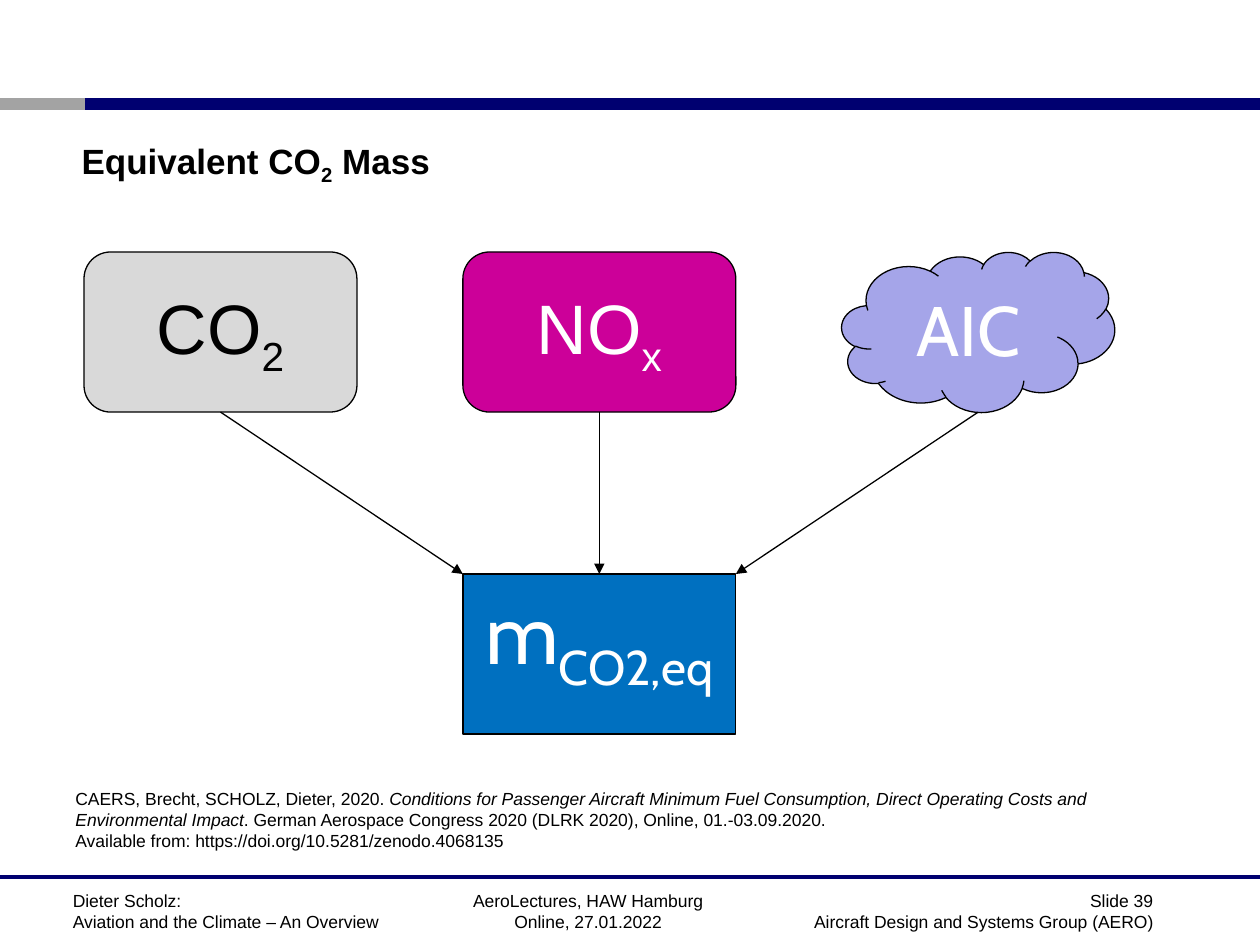
from dataclasses import dataclass

from lxml.etree import SubElement
from pptx import Presentation
from pptx.dml.color import RGBColor
from pptx.enum.shapes import MSO_CONNECTOR as Line, MSO_SHAPE as Shape
from pptx.enum.text import MSO_ANCHOR as Anchor, PP_ALIGN as Align
from pptx.oxml.ns import qn
from pptx.util import Pt

BLACK = RGBColor(0x00, 0x00, 0x00)
WHITE = RGBColor(0xFF, 0xFF, 0xFF)
NAVY = RGBColor(0x00, 0x00, 0x70)
GREY = RGBColor(0xA3, 0xA3, 0xA3)
LIGHT_GREY = RGBColor(0xD9, 0xD9, 0xD9)
MAGENTA = RGBColor(0xCC, 0x00, 0x99)
LAVENDER = RGBColor(0xA5, 0xA5, 0xE9)
BLUE = RGBColor(0x00, 0x70, 0xC0)

# Diagram grid in points
NODE_W, NODE_H = 156, 91.5
COLUMNS = [48 + 216.5 * i for i in range(3)]
SOURCE_TOP, RESULT_TOP = 144, 328


@dataclass(frozen=True)
class Piece:
    text: str
    italic: bool = False
    subscript: bool = False


@dataclass(frozen=True)
class Style:
    size: float
    color: RGBColor = BLACK
    font: str = "Arial"
    bold: bool = False
    align: Align = Align.LEFT


@dataclass(frozen=True)
class Node:
    kind: Shape
    left: float
    top: float
    fill: RGBColor
    label: list[Piece]
    style: Style
    anchor: Anchor = Anchor.MIDDLE


def write(frame, lines: list[list[Piece]], style: Style) -> None:
    frame.word_wrap = True
    for i, pieces in enumerate(lines):
        paragraph = frame.paragraphs[0] if i == 0 else frame.add_paragraph()
        paragraph.alignment = style.align
        for piece in pieces:
            run = paragraph.add_run()
            run.text = piece.text
            font = run.font
            font.name, font.size = style.font, Pt(style.size)
            font.bold, font.italic = style.bold, piece.italic
            font.color.rgb = style.color
            if piece.subscript:
                run._r.get_or_add_rPr().set("baseline", "-25000")


def add_text(slide, left: float, top: float, width: float, height: float,
             lines: list[list[Piece]], style: Style, anchor: Anchor = Anchor.TOP) -> None:
    box = slide.shapes.add_textbox(Pt(left), Pt(top), Pt(width), Pt(height))
    box.text_frame.vertical_anchor = anchor
    write(box.text_frame, lines, style)


def add_line(slide, start: tuple[float, float], end: tuple[float, float],
             color: RGBColor, width: float, arrow: bool = False):
    line = slide.shapes.add_connector(Line.STRAIGHT, *map(Pt, start + end))
    line.line.color.rgb = color
    line.line.width = Pt(width)
    if arrow:
        SubElement(line.line._get_or_add_ln(), qn("a:tailEnd"), type="triangle")
    SubElement(line._element.spPr, qn("a:effectLst"))
    return line


def add_node(slide, node: Node):
    shape = slide.shapes.add_shape(
        node.kind, Pt(node.left), Pt(node.top), Pt(NODE_W), Pt(NODE_H))
    shape.shadow.inherit = False
    shape.fill.solid()
    shape.fill.fore_color.rgb = node.fill
    shape.line.color.rgb = BLACK
    shape.line.width = Pt(0.75)
    shape.text_frame.vertical_anchor = node.anchor
    write(shape.text_frame, [node.label], node.style)
    return shape


def add_frame(slide) -> None:
    # Header and footer rules
    add_line(slide, (0, 59.5), (50, 59.5), GREY, 7.09)
    add_line(slide, (48.5, 59.5), (720, 59.5), NAVY, 7.09)
    add_line(slide, (0, 501), (720, 501), NAVY, 2)

    # Footer texts
    footers = [
        (34.5, 195, Align.LEFT, "Dieter Scholz:", "Aviation and the Climate – An Overview"),
        (222, 228, Align.CENTER, "AeroLectures, HAW Hamburg", "Online, 27.01.2022"),
        (445, 221, Align.RIGHT, "Slide 39", "Aircraft Design and Systems Group (AERO)"),
    ]
    for left, width, align, *lines in footers:
        add_text(slide, left, 505, width, 36, [[Piece(line)] for line in lines],
                 Style(10, align=align))


def add_diagram(slide) -> None:
    dark = Style(40, align=Align.CENTER)
    light = Style(40, WHITE, align=Align.CENTER)
    light_cabin = Style(40, WHITE, "Cabin", align=Align.CENTER)
    result_style = Style(48, WHITE, "Cabin", align=Align.CENTER)
    two = Piece("2", subscript=True)

    # Emissions and their combined mass
    left, middle, right = COLUMNS
    co2 = add_node(slide, Node(Shape.ROUNDED_RECTANGLE, left, SOURCE_TOP, LIGHT_GREY,
                               [Piece("CO"), two], dark))
    nox = add_node(slide, Node(Shape.ROUNDED_RECTANGLE, middle, SOURCE_TOP, MAGENTA,
                               [Piece("NO"), Piece("x", subscript=True)], light))
    add_node(slide, Node(Shape.CLOUD, right, SOURCE_TOP, LAVENDER,
                         [Piece("AIC")], light_cabin))
    mass = add_node(slide, Node(Shape.RECTANGLE, middle, RESULT_TOP, BLUE,
                                [Piece("m"), Piece("CO2,eq", subscript=True)],
                                result_style, Anchor.TOP))

    # Arrows to the left corner, top centre and right corner of the result
    targets = [middle, middle + NODE_W / 2, middle + NODE_W]
    co2_arrow, nox_arrow, _ = [
        add_line(slide, (column + NODE_W / 2, SOURCE_TOP + NODE_H),
                 (target, RESULT_TOP), BLACK, 0.75, arrow=True)
        for column, target in zip(COLUMNS, targets)]
    co2_arrow.begin_connect(co2, 2)
    nox_arrow.begin_connect(nox, 2)
    nox_arrow.end_connect(mass, 0)


def main() -> None:
    deck = Presentation()
    deck.slide_width, deck.slide_height = Pt(720), Pt(540)
    slide = deck.slides.add_slide(deck.slide_layouts[6])

    add_frame(slide)
    # Title
    add_text(slide, 39.5, 75.5, 647, 35.5,
             [[Piece("Equivalent CO"), Piece("2", subscript=True), Piece(" Mass")]],
             Style(20, bold=True), Anchor.MIDDLE)
    add_diagram(slide)
    # Reference
    add_text(slide, 36, 447, 635, 44, [
        [Piece("CAERS, Brecht, SCHOLZ, Dieter, 2020. "),
         Piece("Conditions for Passenger Aircraft Minimum Fuel Consumption, "
               "Direct Operating Costs and Environmental Impact", italic=True),
         Piece(". German Aerospace Congress 2020 (DLRK 2020), Online, 01.-03.09.2020.")],
        [Piece("Available from: https://doi.org/10.5281/zenodo.4068135")],
    ], Style(10))
    deck.save("out.pptx")


if __name__ == "__main__":
    main()
